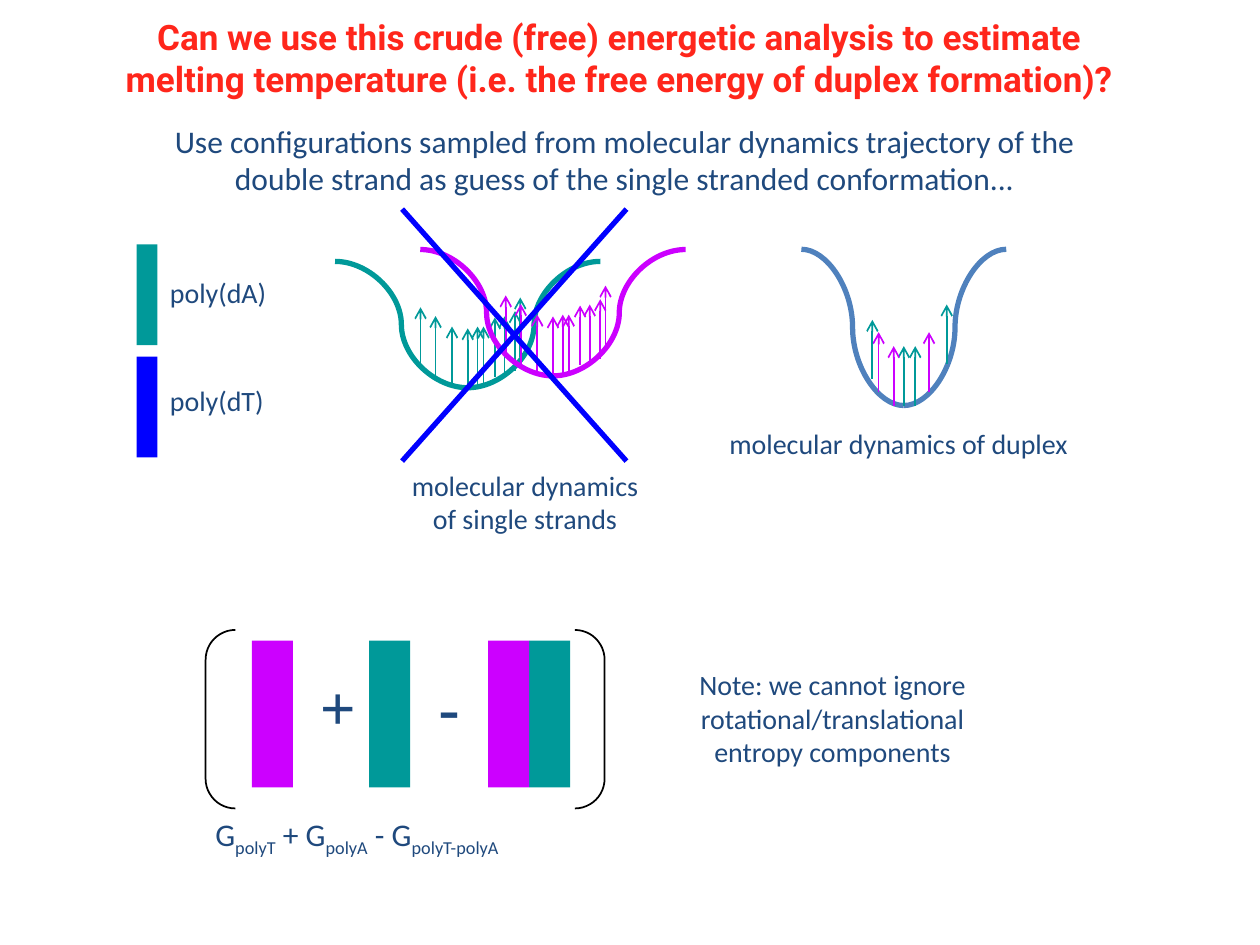
from dataclasses import dataclass

from lxml import etree
from pptx import Presentation
from pptx import util as u
from pptx.dml import color
from pptx.enum import shapes, text
from pptx.oxml import ns

TEAL, PINK, BLUE, STEEL = "009999", "CC00FF", "0000FF", "4F81BD"
NAVY, RED, BLACK = "1F497D", "FF261B", "000000"
ARROW_LENGTH = 34
STRAND_ARROWS = [(9, -1), (-9, -1), (-18.4, -7), (-27, -12), (0, 0),
                 (5.6, -1), (30, -17.6), (27, -9.8), (21, -6.8), (15.5, -6.2)]
DUPLEX_ARROWS = [(14.4, -8, PINK), (0, 0, TEAL), (-14.4, -8, PINK), (-5.8, 0, PINK),
                 (6.5, 0, TEAL), (-18, -15, TEAL), (24.5, -23.8, TEAL)]


def rgb(value):
    """Turn a hex string into a colour."""
    return color.RGBColor.from_string(value)


@dataclass
class Painter:
    """Hold the text style and the slide being drawn."""
    slide: object
    font: str = "Calibri"
    ink: str = NAVY

    def style(self, span, size, font=None, ink=None, bold=False):
        """Format one run."""
        span.font.name = font or self.font
        span.font.size = u.Pt(size)
        span.font.bold = bold
        span.font.color.rgb = rgb(ink or self.ink)

    def label(self, words, left, top, width, height, size=16, wrap=True, center=True, **look):
        """Add a text box with one paragraph."""
        box = self.slide.shapes.add_textbox(*map(u.Pt, (left, top, width, height)))
        box.text_frame.word_wrap = wrap
        box.text_frame.text = words
        para = box.text_frame.paragraphs[0]
        para.alignment = text.PP_ALIGN.CENTER if center else text.PP_ALIGN.LEFT
        for span in para.runs:
            self.style(span, size, **look)
        return box

    def formula(self, terms, left, top, width, height, size=18):
        """Add a line of terms, each with a subscript."""
        box = self.label("", left, top, width, height, center=False)
        for base, subscript in terms:
            for words, shift in ((base, "0"), (subscript, "-25000")):
                span = box.text_frame.paragraphs[0].add_run()
                span.text = words
                self.style(span, size)
                span.font._element.set("baseline", shift)

    def bar(self, left, top, width, height, fill):
        """Add a filled rectangle without outline."""
        bar = self.slide.shapes.add_shape(
            shapes.MSO_SHAPE.RECTANGLE, *map(u.Pt, (left, top, width, height)))
        bar.shadow.inherit = False
        bar.fill.solid()
        bar.fill.fore_color.rgb = rgb(fill)
        bar.line.fill.background()

    def brackets(self, left, top, width, height):
        """Add a pair of rounded brackets."""
        pair = self.slide.shapes.add_shape(
            shapes.MSO_SHAPE.DOUBLE_BRACKET, *map(u.Pt, (left, top, width, height)))
        pair.shadow.inherit = False
        pair.fill.background()
        pair.line.color.rgb = rgb(BLACK)
        pair.line.width = u.Pt(1)

    def line(self, start, end, ink, width=3, kind=shapes.MSO_CONNECTOR.STRAIGHT, arrow=False):
        """Add a connector, with an arrowhead at its start if asked."""
        line = self.slide.shapes.add_connector(kind, *map(u.Pt, (*start, *end)))
        line.line.color.rgb = rgb(ink)
        line.line.width = u.Pt(width)
        if arrow:
            etree.SubElement(line.line._get_or_add_ln(), ns.qn("a:headEnd"), type="arrow")
        etree.SubElement(line._element.spPr, ns.qn("a:effectLst"))

    def well(self, x, y, reach, depth, ink, arrows):
        """Add an energy well with its lowest point at x, y and its arrows."""
        for side in (1, -1):
            self.line((x, y), (x + side * reach, y - depth), ink,
                      kind=shapes.MSO_CONNECTOR.CURVE)
        for dx, dy, shade in arrows:
            foot = y + dy
            self.line((x + dx, foot - ARROW_LENGTH), (x + dx, foot), shade, 1, arrow=True)


def main():
    """Build the slide and save it."""
    deck = Presentation()
    deck.slide_width, deck.slide_height = u.Pt(720), u.Pt(540)
    page = Painter(deck.slides.add_slide(deck.slide_layouts[6]))

    title = page.label(
        "Can we use this crude (free) energetic analysis to estimate melting temperature "
        "(i.e. the free energy of duplex formation)?",
        48, 0, 612, 66, size=20, font="Roboto", ink=RED, bold=True)
    title.text_frame.vertical_anchor = text.MSO_ANCHOR.MIDDLE
    page.label(
        "Use configurations sampled from molecular dynamics trajectory of the double strand "
        "as guess of the single stranded conformation...", 90, 66, 534, 50.5, size=18)

    for name, ink, bar_top, label_top in (("poly(dA)", TEAL, 139.7, 154),
                                          ("poly(dT)", BLUE, 203.8, 215.5)):
        page.bar(78, bar_top, 12, 57.6, ink)
        page.label(name, 90, label_top, 70, 26.5, wrap=False, center=False)

    page.well(516.5, 231.8, 58.5, 89.3, STEEL, DUPLEX_ARROWS)
    for x, y, ink in ((267.3, 221.6, TEAL), (316, 214.8, PINK)):
        page.well(x, y, 75.8, 72.2, ink, [(dx, dy, ink) for dx, dy in STRAND_ARROWS])
    left, top, right, bottom = 229.8, 119.5, 358, 263.5
    page.line((right, top), (left, bottom), BLUE)
    page.line((left, top), (right, bottom), BLUE)
    page.label("molecular dynamics of single strands", 222, 264, 156, 46)
    page.label("molecular dynamics of duplex", 366, 240, 295, 26.5)

    for left, ink in ((302.4, TEAL), (279, PINK), (144, PINK), (211, TEAL)):
        page.bar(left, 366, 23.4, 84, ink)
    for sign, left, width in (("-", 243.5, 26.5), ("+", 175.7, 35.3)):
        page.label(sign, left, 378, width, 50.5, size=36, wrap=False, center=False,
                   font="Times New Roman", bold=True)
    page.brackets(117.5, 360, 228, 102)
    page.formula([("G", "polyT"), (" + G", "polyA"), (" - G", "polyT-polyA")],
                 116, 462, 230, 31)
    page.label("Note: we cannot ignore rotational/translational entropy components",
               384, 378, 183.5, 65)
    deck.save("out.pptx")


if __name__ == "__main__":
    main()
